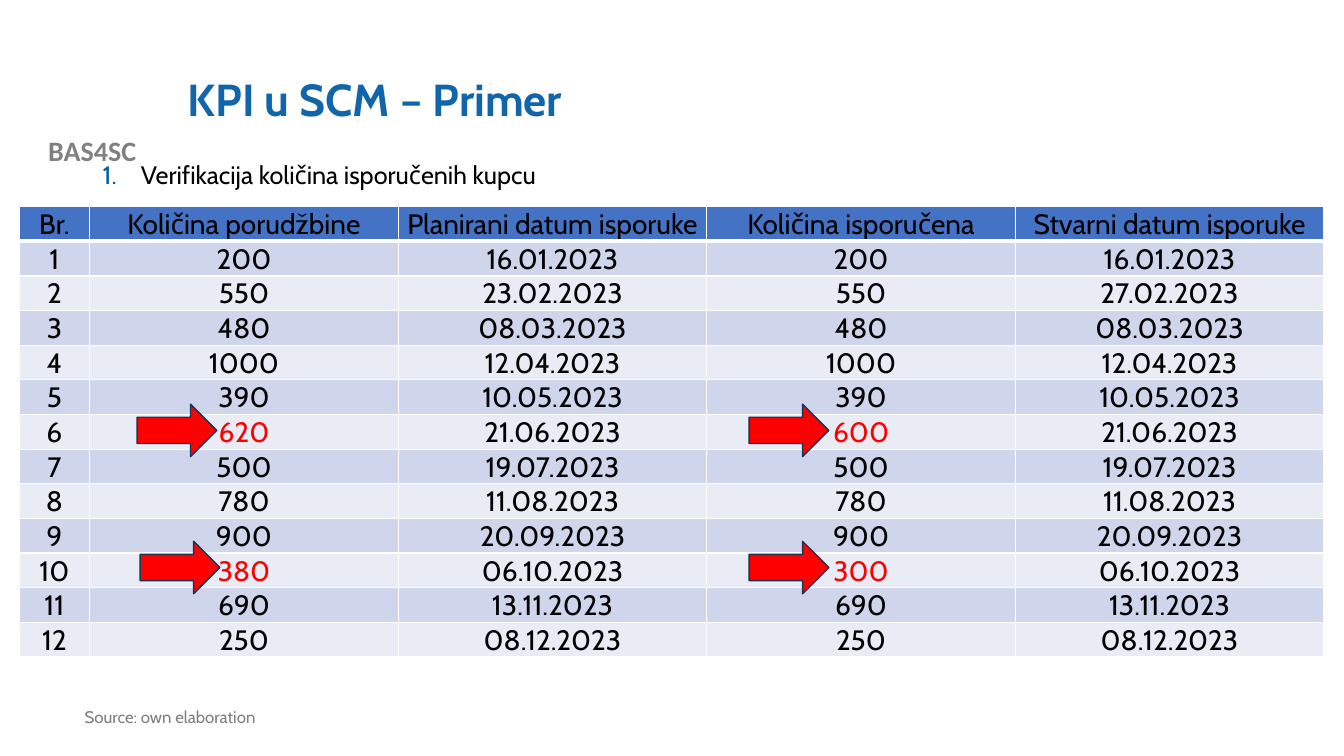
from lxml import etree
from pptx import Presentation
from pptx import util as u
from pptx.dml.color import RGBColor
from pptx.enum import shapes, text
from pptx.oxml import ns

PX = u.Inches(1) // 100
FONT = "Cabin"
WHITE, BLACK, RED = "FFFFFF", "000000", "FF0000"
HEADER_FILL, BAND_FILLS = "4472C4", ("CFD5EA", "E9EBF5")
COLUMN_WIDTHS = (70, 306, 306, 306, 306)
ROW_HEIGHT = 34
HEADERS = ("Br.", "Količina porudžbine", "Planirani datum isporuke",
           "Količina isporučena", "Stvarni datum isporuke")
ORDERS = (
    ("200", "16.01.2023", "200", "16.01.2023"),
    ("550", "23.02.2023", "550", "27.02.2023"),
    ("480", "08.03.2023", "480", "08.03.2023"),
    ("1000", "12.04.2023", "1000", "12.04.2023"),
    ("390", "10.05.2023", "390", "10.05.2023"),
    ("620", "21.06.2023", "600", "21.06.2023"),
    ("500", "19.07.2023", "500", "19.07.2023"),
    ("780", "11.08.2023", "780", "11.08.2023"),
    ("900", "20.09.2023", "900", "20.09.2023"),
    ("380", "06.10.2023", "300", "06.10.2023"),
    ("690", "13.11.2023", "690", "13.11.2023"),
    ("250", "08.12.2023", "250", "08.12.2023"),
)
ARROWS = ((136, 401), (743, 401), (139, 537), (743, 537))


def px(*lengths):
    return [u.Emu(length * PX) for length in lengths]


def color(hex_string):
    return RGBColor.from_string(hex_string)


def write(frame, words, size, ink, font=FONT, bold=False,
          align=text.PP_ALIGN.LEFT, anchor=text.MSO_ANCHOR.TOP, spacing=None):
    """Fill a text frame with one formatted paragraph and return it."""
    frame.word_wrap = True
    frame.vertical_anchor = anchor
    paragraph = frame.paragraphs[0]
    paragraph.alignment = align
    paragraph.line_spacing = spacing
    run = paragraph.add_run()
    run.text = words
    run.font.name, run.font.size, run.font.bold = font, u.Pt(size), bold
    run.font.color.rgb = color(ink)
    return paragraph


def add_text(slide, box, words, size, ink, **style):
    shape = slide.shapes.add_textbox(*px(*box))
    return write(shape.text_frame, words, size, ink, **style)


def add_number(paragraph, ink, indent):
    """Number a paragraph automatically with a hanging indent."""
    properties = paragraph._p.get_or_add_pPr()
    properties.set("marL", str(indent * PX))
    properties.set("indent", str(-indent * PX))
    bullet_color = etree.SubElement(properties, ns.qn("a:buClr"))
    etree.SubElement(bullet_color, ns.qn("a:srgbClr"), val=ink)
    etree.SubElement(properties, ns.qn("a:buFont"), typeface=FONT)
    etree.SubElement(properties, ns.qn("a:buAutoNum"), type="arabicPeriod")


def set_borders(cell, bottom):
    properties = cell._tc.get_or_add_tcPr()
    for side, width in (("L", 1), ("R", 1), ("T", 1), ("B", bottom)):
        line = etree.SubElement(properties, ns.qn(f"a:ln{side}"), w=str(u.Pt(width)))
        fill = etree.SubElement(line, ns.qn("a:solidFill"))
        etree.SubElement(fill, ns.qn("a:srgbClr"), val=WHITE)


def format_cell(cell, words, fill, ink, anchor, bottom):
    cell.margin_left, cell.margin_top, cell.margin_right, cell.margin_bottom = px(1, 1, 1, 0)
    set_borders(cell, bottom)
    cell.fill.solid()
    cell.fill.fore_color.rgb = color(fill)
    write(cell.text_frame, words, 20, ink, align=text.PP_ALIGN.CENTER)
    cell.vertical_anchor = anchor


def add_order_table(slide, left, top):
    """Add the orders, with differing quantities in red."""
    rows = [HEADERS] + [(str(number), *order) for number, order in enumerate(ORDERS, 1)]
    size = px(left, top, sum(COLUMN_WIDTHS), ROW_HEIGHT * len(rows))
    table = slide.shapes.add_table(len(rows), len(HEADERS), *size).table
    for column, width in zip(table.columns, px(*COLUMN_WIDTHS)):
        column.width = width
    for r, values in enumerate(rows):
        table.rows[r].height = px(ROW_HEIGHT)[0]
        fill = BAND_FILLS[(r - 1) % 2] if r else HEADER_FILL
        differs = r > 0 and values[1] != values[3]
        for c, words in enumerate(values):
            ink = RED if differs and c in (1, 3) else BLACK
            anchor = text.MSO_ANCHOR.BOTTOM if c > 2 else text.MSO_ANCHOR.MIDDLE
            format_cell(table.cell(r, c), words, fill, ink, anchor, bottom=1 if r else 3)


def add_arrow(slide, left, top):
    arrow = slide.shapes.add_shape(shapes.MSO_SHAPE.RIGHT_ARROW, *px(left, top, 79, 52))
    arrow.shadow.inherit = False
    arrow.fill.solid()
    arrow.fill.fore_color.rgb = color(RED)
    arrow.line.color.rgb = color("1E3256")
    arrow.line.width = u.Pt(1)


def add_title(slide, box, words):
    title = slide.shapes.title
    title.left, title.top, title.width, title.height = px(*box)
    write(title.text_frame, words, 32, "1065AB", bold=True,
          anchor=text.MSO_ANCHOR.MIDDLE, spacing=0.9)


def main():
    presentation = Presentation()
    presentation.slide_width, presentation.slide_height = px(1333, 750)
    slide = presentation.slides.add_slide(presentation.slide_layouts[5])
    add_text(slide, (0, 128, 183, 44), "BAS4SC", 20, "808080", font="Calibri",
             bold=True, align=text.PP_ALIGN.CENTER)
    add_title(slide, (176, 40, 1066, 122), "KPI u SCM – Primer")
    goal = add_text(slide, (92, 157, 1223, 114), "Verifikacija količina isporučenih kupcu",
                    18, BLACK, align=text.PP_ALIGN.JUSTIFY, spacing=0.9)
    add_number(goal, "015BA6", 38)
    add_text(slide, (74, 698, 501, 52), "Source: own elaboration", 12, "7F7F7F", spacing=0.9)
    add_order_table(slide, 19, 205)
    for left, top in ARROWS:
        add_arrow(slide, left, top)
    presentation.save("out.pptx")


if __name__ == "__main__":
    main()
